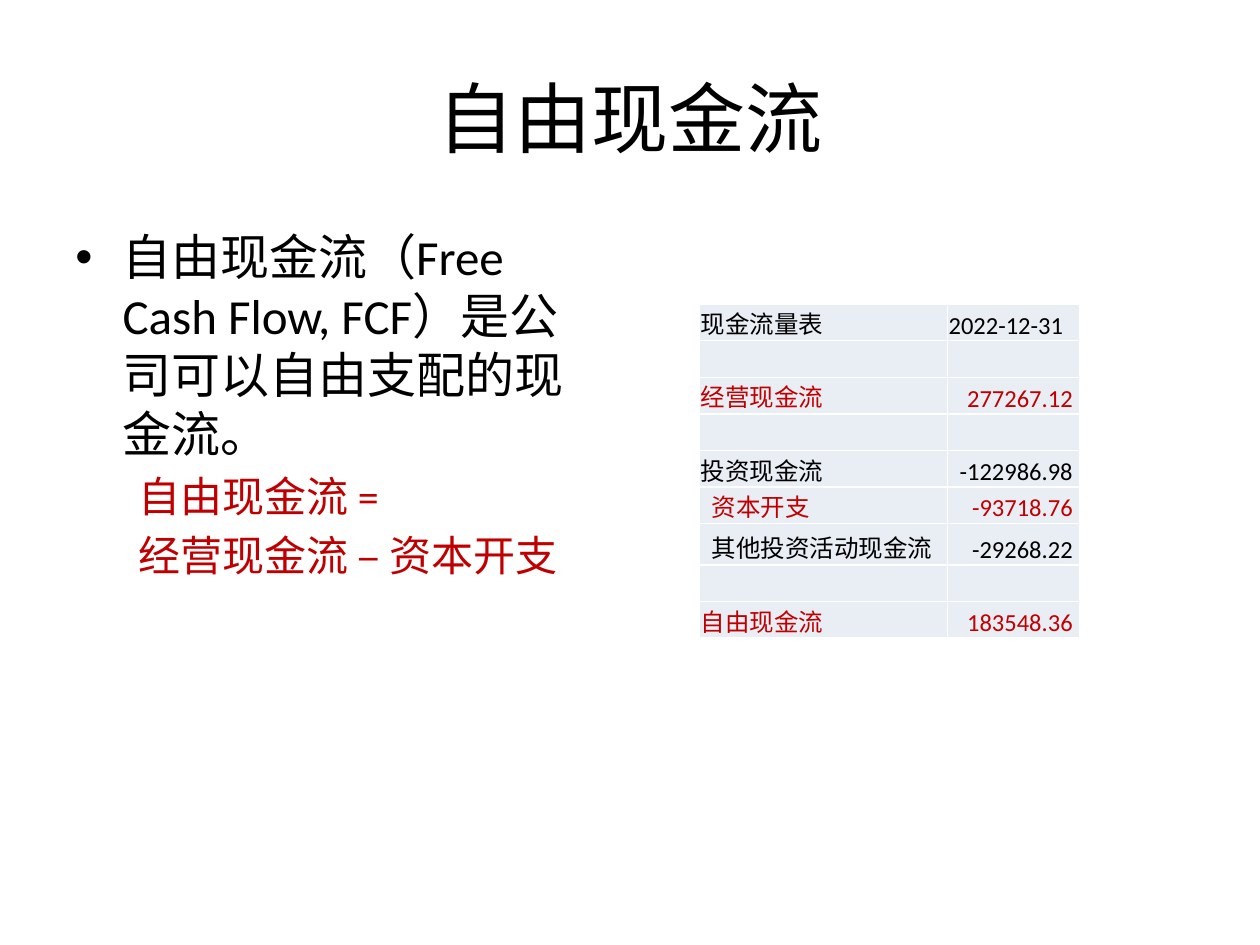
from pptx import Presentation
from pptx.dml.color import RGBColor
from pptx.enum import text
from pptx.oxml.ns import qn
from pptx.util import Pt
from lxml import etree

FONT = "Calibri"
COLORS = {"ink": "000000", "accent": "C00000", "cell": "E9EDF4", "border": "FFFFFF"}

# Content
TITLE = "自由现金流"
DEFINITION = "自由现金流（Free Cash Flow, FCF）是公司可以自由支配的现金流。"
FORMULA = ["自由现金流 =", "经营现金流 – 资本开支"]
# label, value, colour, indented
CASH_FLOWS = [
    ("现金流量表", "2022-12-31", "ink", False),
    ("", "", "ink", False),
    ("经营现金流", "277267.12", "accent", False),
    ("", "", "ink", False),
    ("投资现金流", "-122986.98", "ink", False),
    ("资本开支", "-93718.76", "accent", True),
    ("其他投资活动现金流", "-29268.22", "ink", True),
    ("", "", "ink", False),
    ("自由现金流", "183548.36", "accent", False),
]
COLUMN_WIDTHS = [141.8, 75.6]
ROW_HEIGHT, TALL_ROW, TALL_HEIGHT = 20.9, 6, 23.8


def style(paragraph, size, color):
    for run in paragraph.runs:
        run.font.size = Pt(size)
        run.font.name = FONT
        run.font.color.rgb = RGBColor.from_string(COLORS[color])


def indent(paragraph, left, first=0, bullet=None):
    props = paragraph._p.get_or_add_pPr()
    props.set("marL", str(Pt(left)))
    props.set("indent", str(Pt(first)))
    if bullet:
        etree.SubElement(props, qn("a:buFont")).set("typeface", "Arial")
        etree.SubElement(props, qn("a:buChar")).set("char", bullet)


def add_text_box(slide, left, top, width, height):
    frame = slide.shapes.add_textbox(Pt(left), Pt(top), Pt(width), Pt(height)).text_frame
    frame.word_wrap = True
    return frame


def add_borders(cell):
    props = cell._tc.get_or_add_tcPr()
    for position, side in enumerate(("a:lnL", "a:lnR", "a:lnT", "a:lnB")):
        line = etree.Element(qn(side), w=str(Pt(1)))
        fill = etree.SubElement(line, qn("a:solidFill"))
        etree.SubElement(fill, qn("a:srgbClr")).set("val", COLORS["border"])
        props.insert(position, line)


def fill_cell(cell, content, color, align, left=0.7, right=0.7):
    cell.fill.solid()
    cell.fill.fore_color.rgb = RGBColor.from_string(COLORS["cell"])
    add_borders(cell)
    cell.vertical_anchor = text.MSO_ANCHOR.BOTTOM
    cell.margin_left, cell.margin_right = Pt(left), Pt(right)
    cell.margin_top, cell.margin_bottom = Pt(0.7), Pt(0)
    cell.text_frame.text = content
    paragraph = cell.text_frame.paragraphs[0]
    paragraph.alignment = align
    style(paragraph, 14, color)
    if not content:
        etree.SubElement(paragraph._p, qn("a:endParaRPr")).set("sz", "1400")


prs = Presentation()
prs.slide_width, prs.slide_height = Pt(720), Pt(540)
slide = prs.slides.add_slide(prs.slide_layouts[6])

# Title
title = add_text_box(slide, 36, 21.6, 648, 90)
title.vertical_anchor = text.MSO_ANCHOR.MIDDLE
title.text = TITLE
title.paragraphs[0].alignment = text.PP_ALIGN.CENTER
style(title.paragraphs[0], 44, "ink")

# Definition and formula
body = add_text_box(slide, 36, 126, 318, 356.4)
body.text = "\n".join([DEFINITION] + FORMULA)
definition, *formula = body.paragraphs
indent(definition, 27, -27, "•")
style(definition, 28, "ink")
for step in formula:
    indent(step, 36)
    step.space_before = Pt(4.8)
    style(step, 24, "accent")

# Cash flow table
heights = [TALL_HEIGHT if i == TALL_ROW else ROW_HEIGHT for i in range(len(CASH_FLOWS))]
table = slide.shapes.add_table(
    len(CASH_FLOWS), len(COLUMN_WIDTHS), Pt(399.6), Pt(173.8),
    Pt(sum(COLUMN_WIDTHS)), Pt(sum(heights))).table
table.first_row = table.horz_banding = False
for column, width in zip(table.columns, COLUMN_WIDTHS):
    column.width = Pt(width)
for i, (label, value, color, indented) in enumerate(CASH_FLOWS):
    table.rows[i].height = Pt(heights[i])
    fill_cell(table.cell(i, 0), label, color, text.PP_ALIGN.LEFT, left=7 if indented else 0.7)
    if i == 0:
        fill_cell(table.cell(i, 1), value, color, text.PP_ALIGN.LEFT)
    else:
        fill_cell(table.cell(i, 1), value, color, text.PP_ALIGN.RIGHT, right=3.9)

prs.save("out.pptx")
